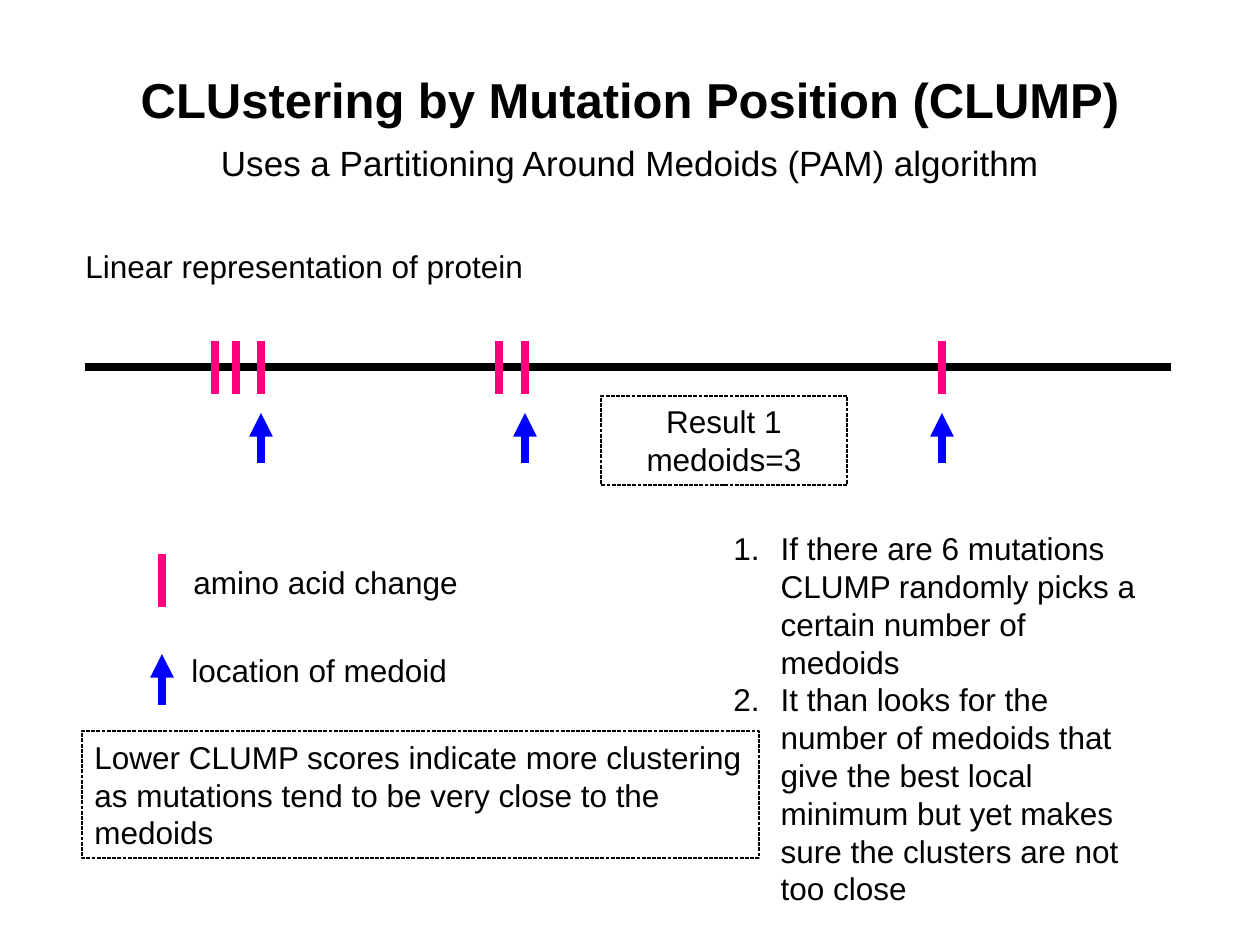
import pptx
import pptx.dml.color
import pptx.enum.dml
import pptx.enum.shapes
import pptx.enum.text
import pptx.oxml.ns
import pptx.util
import lxml.etree

PX = 914400 / 126
COLORS = {"text": "000000", "mutation": "FF0080", "medoid": "0000FF"}
ALIGN = pptx.enum.text.PP_ALIGN
ANCHOR = pptx.enum.text.MSO_ANCHOR
qn = pptx.oxml.ns.qn


def add_line(x1, y1, x2, y2, color, arrow=False):
    ends = [round(value * PX) for value in (x1, y1, x2, y2)]
    connector = slide.shapes.add_connector(pptx.enum.shapes.MSO_CONNECTOR.STRAIGHT, *ends)
    connector.line.width = pptx.util.Pt(4.5)
    connector.line.color.rgb = pptx.dml.color.RGBColor.from_string(COLORS[color])
    properties = connector._element.spPr
    if arrow:
        lxml.etree.SubElement(properties.find(qn("a:ln")), qn("a:tailEnd"), type="triangle")
    lxml.etree.SubElement(properties, qn("a:effectLst"))


def write_text(shape, lines, size=18, align=ALIGN.LEFT, anchor=ANCHOR.TOP,
               bold=False, numbered=False):
    frame = shape.text_frame
    frame.word_wrap = True
    frame.vertical_anchor = anchor
    frame.text = "\n".join(lines)
    for paragraph in frame.paragraphs:
        paragraph.alignment = align
        if numbered:
            properties = paragraph._p.get_or_add_pPr()
            properties.set("marL", "342900")
            properties.set("indent", "-342900")
            lxml.etree.SubElement(properties, qn("a:buAutoNum"), type="arabicPeriod")
        paragraph.font.name = "Arial"
        paragraph.font.size = pptx.util.Pt(size)
        paragraph.font.bold = bold
        paragraph.font.color.rgb = pptx.dml.color.RGBColor.from_string(COLORS["text"])


presentation = pptx.Presentation()
presentation.slide_width = pptx.util.Inches(10)
presentation.slide_height = pptx.util.Inches(7.5)
slide = presentation.slides.add_slide(presentation.slide_layouts[5])

# Title
title = slide.shapes.title
title.left, title.top, title.width, title.height = [
    round(value * PX) for value in (63, 20, 1134, 158)]
write_text(title, ["CLUstering by Mutation Position (CLUMP)"], 28,
           ALIGN.CENTER, ANCHOR.MIDDLE, bold=True)

# Protein, its mutations and the medoids
add_line(85, 367, 1171, 367, "text")
for x in (215, 236, 261, 499, 525, 942):
    add_line(x, 341, x, 394, "mutation")
for x in (261, 525, 942):
    add_line(x, 463, x, 413, "medoid", arrow=True)

# Legend symbols
add_line(162, 554, 162, 607, "mutation")
add_line(162, 705, 162, 654, "medoid", arrow=True)

# Plain texts
steps = [
    "If there are 6 mutations CLUMP randomly picks a certain number of medoids",
    "It than looks for the number of medoids that give the best local minimum "
    "but yet makes sure the clusters are not too close",
]
texts = [
    ((63, 135, 1134, 55), ["Uses a Partitioning Around Medoids (PAM) algorithm"],
     {"size": 20, "align": ALIGN.CENTER}),
    ((73, 241, 553, 50), ["Linear representation of protein"], {}),
    ((181, 557, 469, 50), ["amino acid change"], {}),
    ((179, 645, 469, 50), ["location of medoid"], {}),
    ((721, 523, 430, 394), steps, {"numbered": True}),
]
for box, lines, style in texts:
    text_box = slide.shapes.add_textbox(*[round(value * PX) for value in box])
    write_text(text_box, lines, **style)

# Dashed boxes
notes = [
    ((601, 396, 246, 89), ["Result 1", "medoids=3"], {"align": ALIGN.CENTER}),
    ((82, 731, 677, 127),
     ["Lower CLUMP scores indicate more clustering as mutations tend to be "
      "very close to the medoids"], {"anchor": ANCHOR.MIDDLE}),
]
for box, lines, style in notes:
    note = slide.shapes.add_shape(pptx.enum.shapes.MSO_SHAPE.RECTANGLE,
                                  *[round(value * PX) for value in box])
    note.shadow.inherit = False
    note.fill.background()
    note.line.width = pptx.util.Pt(0.75)
    note.line.color.rgb = pptx.dml.color.RGBColor.from_string(COLORS["text"])
    note.line.dash_style = pptx.enum.dml.MSO_LINE.SQUARE_DOT
    write_text(note, lines, **style)

presentation.save("out.pptx")
